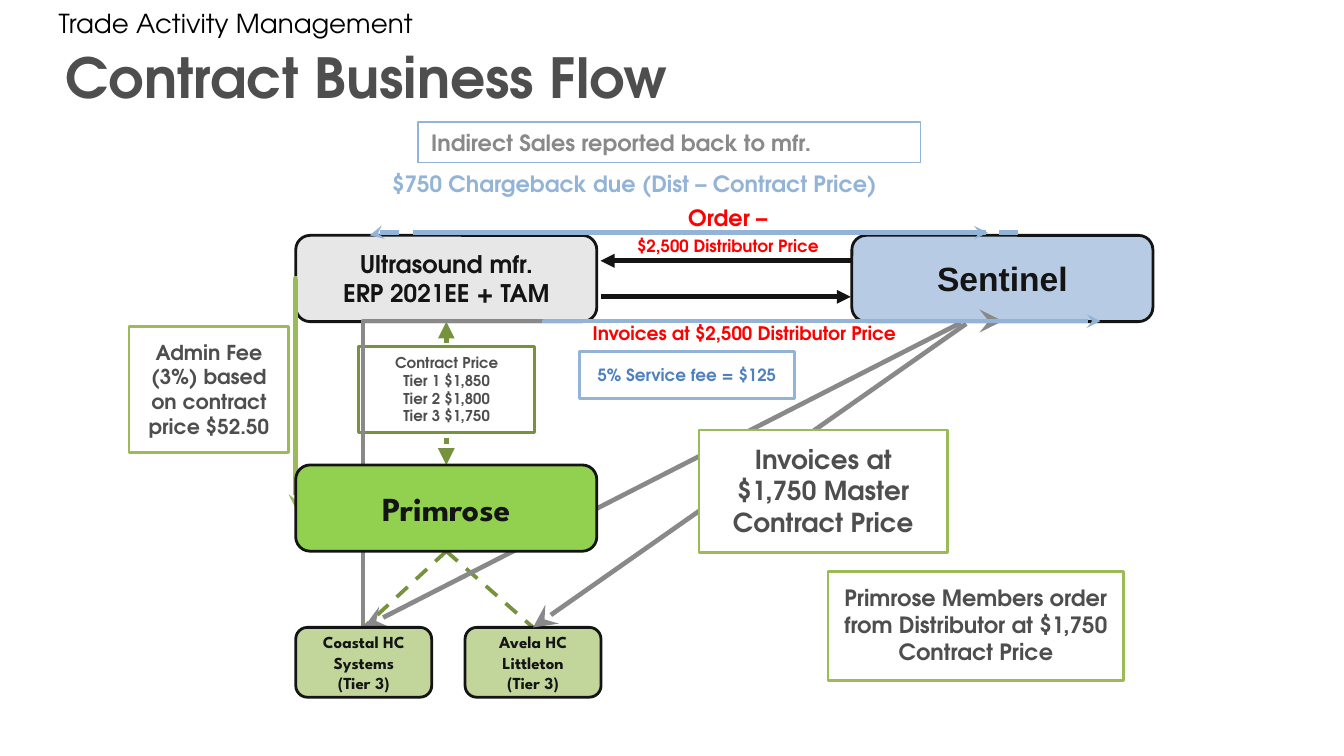
"""Build the contract business flow slide."""
from lxml.etree import SubElement
from pptx import Presentation
from pptx.dml.color import RGBColor
from pptx.enum.dml import MSO_LINE as Dash
from pptx.enum.shapes import MSO_CONNECTOR as Route, MSO_SHAPE as Preset
from pptx.enum.text import MSO_ANCHOR as Anchor, MSO_AUTO_SIZE as Fit, PP_ALIGN as Align
from pptx.oxml.ns import qn
from pptx.util import Cm, Pt

COLORS = {
    "black": "000000", "ink": "141414", "text": "4E4E4E", "gray": "898989",
    "silver": "E7E7E7", "white": "FFFFFF", "red": "FF0000",
    "sky": "93B3D7", "pale_blue": "B7CCE4", "blue": "4F81BD",
    "forest": "76923C", "olive": "9BBB59", "sage": "C2D59B", "lime": "92D050",
}
SANS, SPARTAN = "TeX Gyre Adventor", "League Spartan"


def rgb(name):
    return RGBColor.from_string(COLORS[name])


class FlowSlide:
    """Hold the style and the current slide, and draw each kind of element."""

    def __init__(self, deck):
        self.slide = deck.slides.add_slide(deck.slide_layouts[7])
        self.shapes = self.slide.shapes

    def fill_text(self, shape, text, size, color, font=SANS, bold=True, align=Align.LEFT,
                  anchor=Anchor.TOP, inset=0.25):
        frame = shape.text_frame
        frame.text = text
        frame.word_wrap = True
        frame.auto_size = Fit.NONE
        frame.vertical_anchor = anchor
        frame.margin_left = frame.margin_right = Cm(0.25)
        frame.margin_top = frame.margin_bottom = Cm(inset)
        for paragraph in frame.paragraphs:
            paragraph.alignment = align
            for run in paragraph.runs:
                run.font.name, run.font.size, run.font.bold = font, Pt(size), bold
                run.font.color.rgb = rgb(color)
        return frame

    def heading(self, holder, area, text, size, color, bold, anchor, spacing):
        holder.left, holder.top, holder.width, holder.height = map(Cm, area)
        frame = self.fill_text(holder, text, size, color, bold=bold, anchor=anchor, inset=0.13)
        frame.paragraphs[0].line_spacing = spacing
        frame.paragraphs[0].space_before = Pt(0)

    def label(self, area, text, size, color, **style):
        return self.fill_text(self.shapes.add_textbox(*map(Cm, area)), text, size, color, **style)

    def box(self, area, text, size, color, fill, edge, weight=1.5,
            preset=Preset.RECTANGLE, align=Align.CENTER, **style):
        shape = self.shapes.add_shape(preset, *map(Cm, area))
        shape.shadow.inherit = False
        shape.fill.solid()
        shape.fill.fore_color.rgb = rgb(fill)
        shape.line.color.rgb = rgb(edge)
        shape.line.width = Pt(weight)
        self.fill_text(shape, text, size, color, align=align, **style)
        return shape

    def note(self, area, text, size, color="text", edge="olive", **style):
        return self.box(area, text, size, color, "white", edge, **style)

    def party(self, area, text, size, fill, font=SPARTAN):
        return self.box(area, text, size, "ink", fill, "ink", font=font,
                        preset=Preset.ROUNDED_RECTANGLE, anchor=Anchor.MIDDLE)

    def line(self, start, end, color, weight=2.5, dash=None, head=None, tail=None,
             scale="med", route=Route.STRAIGHT):
        link = self.shapes.add_connector(route, *map(Cm, start + end))
        link.line.color.rgb = rgb(color)
        link.line.width = Pt(weight)
        if dash:
            link.line.dash_style = dash
        properties = link._element.spPr
        for tag, kind in (("a:headEnd", head), ("a:tailEnd", tail)):
            if kind:
                SubElement(properties.find(qn("a:ln")), qn(tag), type=kind, w=scale, len=scale)
        SubElement(properties, qn("a:effectLst"))
        return link

    def elbow(self, start, end, color, turn=0, **style):
        link = self.line(start, end, color, route=Route.ELBOW, **style)
        properties = link._element.spPr
        guides = properties.find(qn("a:prstGeom")).find(qn("a:avLst"))
        SubElement(guides, qn("a:gd"), name="adj1", fmla="val 0")
        if turn:
            properties.find(qn("a:xfrm")).set("rot", str(turn * 60000))


def main():
    deck = Presentation()
    deck.slide_width, deck.slide_height = Cm(25.4), Cm(14.29)
    flow = FlowSlide(deck)
    title, content, body = flow.slide.placeholders
    content._element.getparent().remove(content._element)
    flow.heading(body, (0.86, 0.3, 23.65, 0.58), "Trade Activity Management",
                 14, "black", False, Anchor.BOTTOM, 0.95)
    flow.heading(title, (0.99, 0.89, 23.16, 1.35), "Contract Business Flow",
                 29.6, "text", True, Anchor.MIDDLE, 0.8)

    left, wide, tall = 5.59, 5.69, 1.63
    top, middle, bottom = 4.45, 8.79, 11.86
    center = left + wide / 2
    pacific_top, apria_top = (6.87, bottom), (10.07, bottom)

    membership = [flow.line((center, middle + tall), member, "forest", 2, Dash.DASH)
                  for member in (pacific_top, apria_top)]
    maker = flow.party((left, top, wide, tall), "Ultrasound mfr.\vERP 2021EE + TAM",
                       13, "silver", SANS)
    flow.party((16.1, top, wide, tall), "Sentinel", 18, "pale_blue", "Arial")
    contract = flow.line((center, top + tall), (center, middle), "forest", 3,
                         Dash.ROUND_DOT, "triangle", "triangle")
    flow.line((11.35, 5.61), (16.08, 5.61), "ink", tail="triangle")
    flow.label((10.95, 5.84, 7.21, 0.94), "Invoices at $2,500 Distributor Price", 10, "red")
    flow.label((7.16, 2.97, 11.99, 1.02), "$750 Chargeback due (Dist – Contract Price)",
               12, "sky")
    flow.elbow((3.43, 7.42), (7.77, 7.45), "olive", turn=90, tail="stealth")
    flow.elbow((8.15, 4.45), (18.67, 4.4), "sky", tail="stealth")
    flow.note((6.78, 6.55, 3.33, 1.63),
              "Contract Price\vTier 1 $1,850\vTier 2 $1,800\nTier 3 $1,750",
              8, edge="forest", inset=0.13)
    apria = flow.party((8.79, bottom, 2.57, 1.32), "Avela HC Littleton\v(Tier 3)", 9, "sage")
    flow.elbow((6.86, 13.16), (18.95, 6.07), "gray", tail="stealth", scale="lg")
    flow.line((16.13, 4.93), (11.35, 4.93), "ink", tail="triangle")

    order = flow.label((11.66, 3.53, 6.73, 1.63), "Order –\n$2,500 Distributor Price",
                       12, "red", align=Align.CENTER)
    order.margin_left, order.margin_top, order.margin_right = Cm(0), Cm(0.32), Cm(2.54)
    price = order.paragraphs[1]
    price.space_before = Pt(3)
    price.runs[0].font.size = Pt(9)

    apria_invoice = flow.line((18.26, 6.12), apria_top, "gray", tail="stealth", scale="lg")
    flow.elbow((6.99, 4.45), (19.33, 4.4), "sky", dash=Dash.DASH, head="stealth")
    flow.note((15.65, 10.8, 5.59, 2.06),
              "Primrose Members order from Distributor at $1,750 Contract Price", 12)
    flow.note((7.9, 2.31, 9.5, 0.76), "Indirect Sales reported back to mfr.", 12, "gray",
              "sky", weight=0.75, align=Align.LEFT, inset=0.13)
    flow.note((2.44, 6.17, 3.02, 2.39), "Admin Fee (3%) based on contract price $52.50", 11)
    pacific_invoice = flow.line((18.16, 6.1), pacific_top, "gray", tail="stealth", scale="lg")
    flow.note((13.21, 8.13, 4.7, 2.31), "Invoices at $1,750 Master Contract Price", 14)
    buyer = flow.party((left, middle, wide, tall), "Primrose", 18, "lime")
    flow.elbow((10.29, 6.1), (20.8, 6.07), "sky", tail="stealth")
    flow.note((10.95, 6.65, 4.06, 0.89), "5% Service fee = $125", 9, "blue", "sky")
    pacific = flow.party((left, bottom, 2.57, 1.32), "Coastal HC Systems\n(Tier 3)", 9, "sage")

    contract.begin_connect(maker, 2)
    contract.end_connect(buyer, 0)
    for link, invoice, member in zip(membership, (pacific_invoice, apria_invoice),
                                     (pacific, apria)):
        link.begin_connect(buyer, 2)
        link.end_connect(member, 0)
        invoice.end_connect(member, 0)
    deck.save("out.pptx")


if __name__ == "__main__":
    main()
